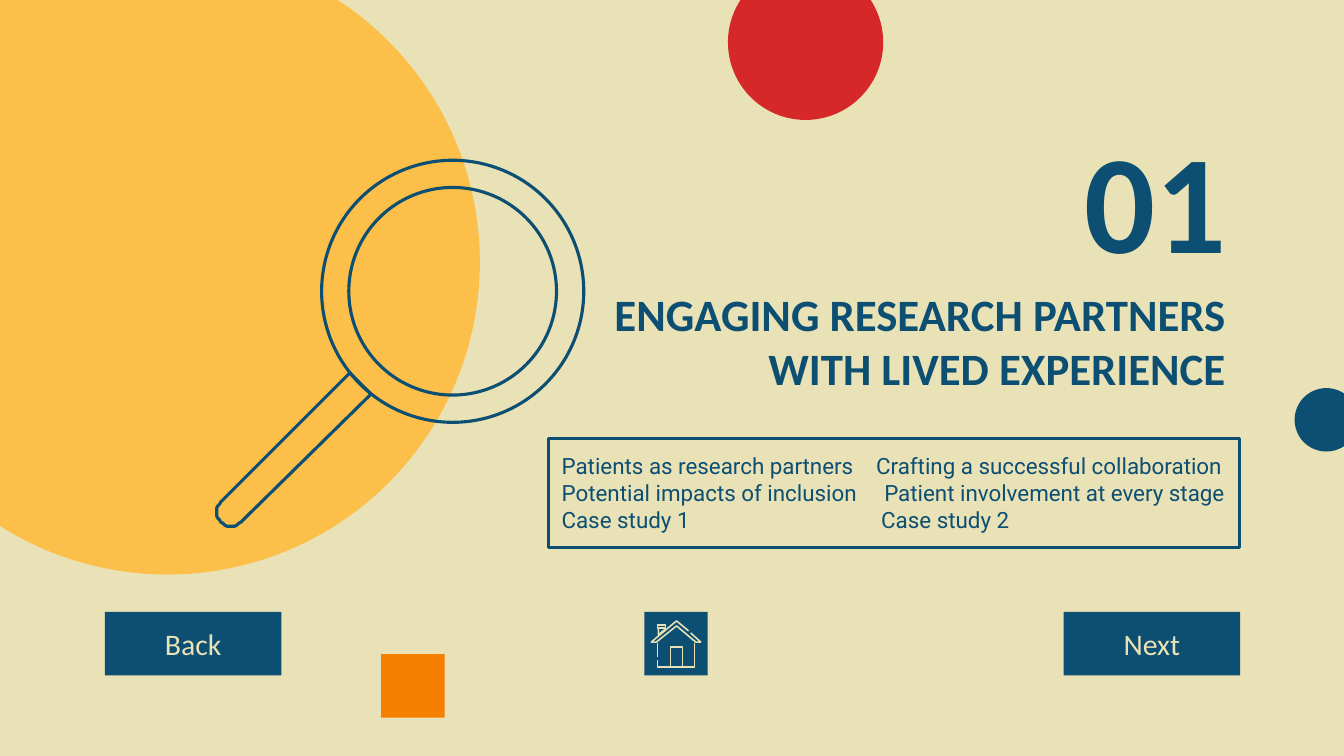
from math import cos, radians, sin

from lxml import etree
from pptx import Presentation
from pptx.dml.color import RGBColor
from pptx.enum.shapes import MSO_SHAPE
from pptx.enum.text import MSO_ANCHOR, PP_ALIGN
from pptx.oxml.ns import qn
from pptx.util import Pt

OVAL, RECT = MSO_SHAPE.OVAL, MSO_SHAPE.RECTANGLE
LEFT, MID, RIGHT = PP_ALIGN.LEFT, PP_ALIGN.CENTER, PP_ALIGN.RIGHT
PX = 9144
PAD = 13
STROKE = 2.25
SIZE = (1333, 750)

HUES = {
    "sand": "EAE2B7",
    "navy": "0C4F72",
    "gold": "FCBF49",
    "orange": "F77F00",
    "red": "D62828",
}

BLOBS = [
    (OVAL, (-144, -50, 620, 620), "gold"),
    (RECT, (378, 649, 63, 63), "orange"),
    (OVAL, (722, -35, 154, 154), "red"),
    (OVAL, (1284, 385, 63, 63), "navy"),
    (RECT, (639, 607, 63, 63), "navy"),
]
LENS = (449, 289)
RINGS = [130, 103]
NECK = [(368, 391), (347, 370)]
GRIP = (229, 508)
BEND = 14

HOUSE = [
    [(683, 626), (671, 616), (646, 637), (651, 637),
     (671, 621), (690, 637), (695, 637), (685, 628)],
    [(652, 652), (652, 638)],
    [(652, 655), (652, 662), (689, 662), (689, 638)],
    [(665, 662), (665, 642), (677, 642), (677, 662)],
    [(652, 623), (652, 620), (660, 620), (660, 623), (652, 623)],
    [(653, 623), (653, 630), (660, 624)],
]

HEADS = [
    ("01", (544, 93, 685, 206), 100),
    ("ENGAGING RESEARCH PARTNERS WITH LIVED EXPERIENCE", (552, 283, 677, 110), 32),
]
TOPICS = [
    ("Patients as research partners", "Crafting a successful collaboration", 312),
    ("Potential impacts of inclusion", "Patient involvement at every stage", 320),
    ("Case study 1", "Case study 2", 317),
]
PANEL = (544, 435, 685, 108)
KEYS = [("Back", (104, 607, 175, 63)), ("Next", (1055, 607, 175, 63))]

FRAME = {
    "word_wrap": True,
    "vertical_anchor": MSO_ANCHOR.MIDDLE,
    "margin_left": PAD * PX,
    "margin_right": PAD * PX,
    "margin_top": PAD * PX,
    "margin_bottom": PAD * PX,
}
HEAD = {"name": "Calibri", "bold": True}
KEY = {"name": "Calibri", "size": Pt(21.3)}
BODY = {"name": "Roboto", "size": Pt(16)}


def emu(box):
    return [v * PX for v in box]


def tint(hue):
    return RGBColor.from_string(HUES[hue])


def put(item, form):
    for key, val in form.items():
        setattr(item, key, val)


def paint(shape, fill=None, line=None, width=STROKE):
    shape.shadow.inherit = False
    if fill:
        shape.fill.solid()
        shape.fill.fore_color.rgb = tint(fill)
    else:
        shape.fill.background()
    if line:
        shape.line.color.rgb = tint(line)
        shape.line.width = Pt(width)
    else:
        shape.line.fill.background()


def draw(slide, kind, box, **look):
    shape = slide.shapes.add_shape(kind, *emu(box))
    paint(shape, **look)
    return shape


def trace(slide, parts, close, **look):
    pen = slide.shapes.build_freeform(*parts[0][0], scale=PX)
    for i, part in enumerate(parts):
        if i:
            pen.move_to(*part[0])
        pen.add_line_segments(part[1:], close=close)
    paint(pen.convert_to_shape(), **look)


def write(shape, lines, hue, align, form):
    frame = shape.text_frame
    put(frame, FRAME)
    for i, line in enumerate(lines):
        para = frame.add_paragraph() if i else frame.paragraphs[0]
        para.alignment = align
        run = para.add_run()
        run.text = line
        put(run.font, form)
        run.font.color.rgb = tint(hue)
    return frame


def set_tab(para, x):
    tabs = etree.SubElement(para._p.get_or_add_pPr(), qn("a:tabLst"))
    etree.SubElement(tabs, qn("a:tab"), pos=str(x * PX), algn="l")


def glass(slide):
    x, y = LENS
    for r in RINGS:
        draw(slide, OVAL, (x - r, y - r, 2 * r, 2 * r), line="navy")
    x, y = GRIP
    turns = [radians(a) for a in range(45, 226, 10)]
    tip = [(x + BEND * cos(t), y + BEND * sin(t)) for t in turns]
    trace(slide, [NECK[:1] + tip + NECK[1:]], True, line="navy")


def main():
    deck = Presentation()
    deck.slide_width, deck.slide_height = emu(SIZE)
    slide = deck.slides.add_slide(deck.slide_layouts[6])
    back = slide.background.fill
    back.solid()
    back.fore_color.rgb = tint("sand")

    for kind, box, hue in BLOBS:
        draw(slide, kind, box, fill=hue)
    glass(slide)
    trace(slide, HOUSE, False, line="sand", width=1.1)

    for text, box, size in HEADS:
        shape = slide.shapes.add_textbox(*emu(box))
        write(shape, [text], "navy", RIGHT, {**HEAD, "size": Pt(size)})

    panel = draw(slide, RECT, PANEL, line="navy")
    rows = [f"{one}\t{two}" for one, two, _ in TOPICS]
    frame = write(panel, rows, "navy", LEFT, BODY)
    for para, (_, _, x) in zip(frame.paragraphs, TOPICS):
        set_tab(para, x)

    for text, box in KEYS:
        write(draw(slide, RECT, box, fill="navy"), [text], "sand", MID, KEY)
    deck.save("out.pptx")


if __name__ == "__main__":
    main()
